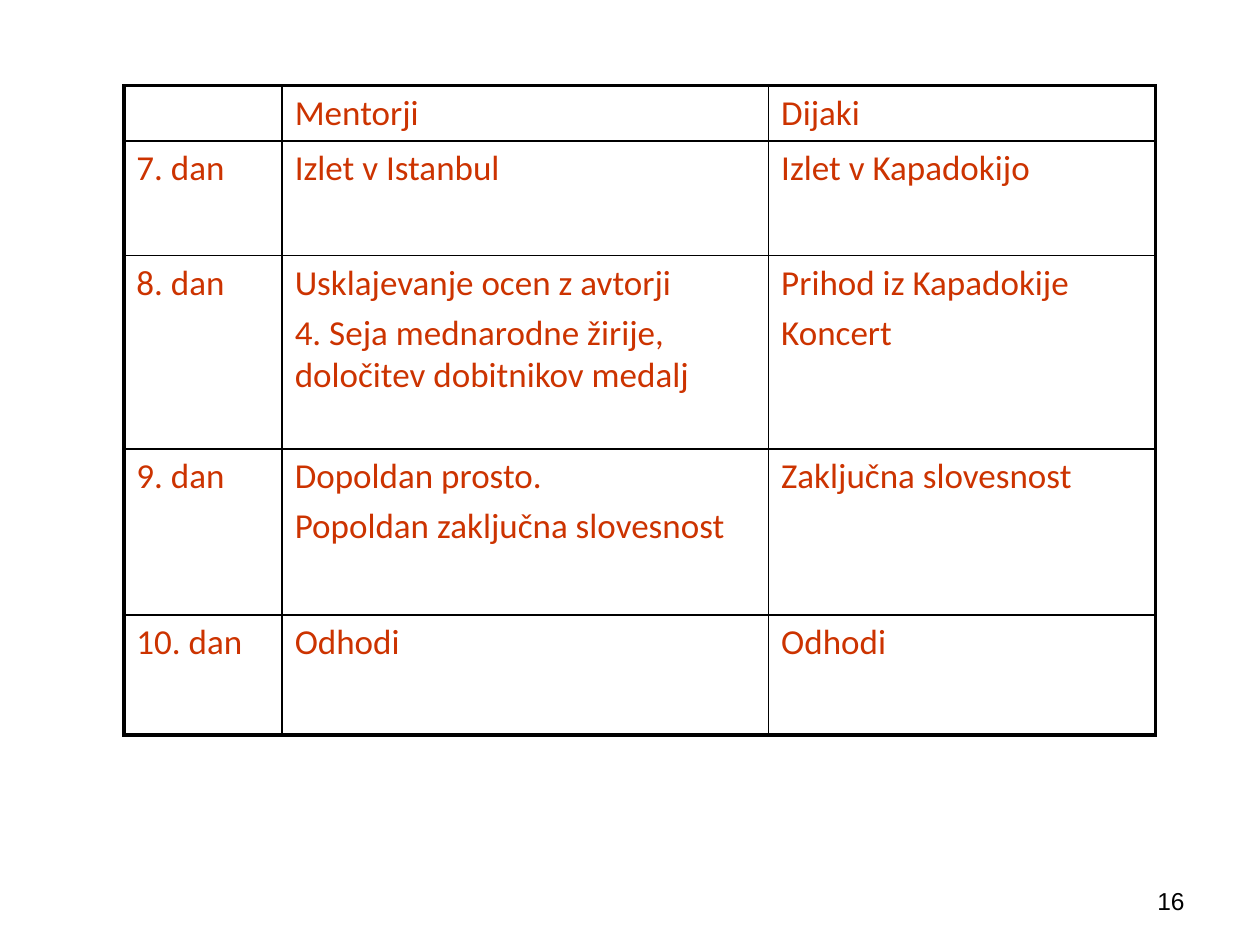
from dataclasses import dataclass

from lxml.etree import SubElement
from pptx import Presentation
from pptx.dml.color import RGBColor
from pptx.enum.text import MSO_ANCHOR, PP_ALIGN
from pptx.oxml.ns import qn
from pptx.util import Pt


@dataclass(frozen=True)
class Theme:
    text: str = "CC3300"
    ink: str = "000000"
    body_font: str = "Calibri"
    number_font: str = "Arial"
    body_size: float = 20
    number_size: float = 14
    inner_line: float = 1
    outer_line: float = 2.25
    para_gap: float = 4


THEME = Theme()

# Each cell is a list of paragraphs
SCHEDULE = [
    [[], ["Mentorji"], ["Dijaki"]],
    [["7. dan"], ["Izlet v Istanbul"], ["Izlet v Kapadokijo"]],
    [["8. dan"],
     ["Usklajevanje ocen z avtorji",
      "4. Seja mednarodne žirije, določitev dobitnikov medalj"],
     ["Prihod iz Kapadokije", "Koncert"]],
    [["9. dan"],
     ["Dopoldan prosto.", "Popoldan zaključna slovesnost"],
     ["Zaključna slovesnost"]],
    [["10. dan"], ["Odhodi"], ["Odhodi"]],
]
COLUMN_WIDTHS = [90.5, 278, 221]
ROW_HEIGHTS = [31.5, 65.5, 110.5, 95, 68.5]


def apply_format(target, values):
    for name, value in values.items():
        setattr(target, name, value)


def write_paragraphs(frame, lines, font, size, color, align=PP_ALIGN.LEFT):
    for index, line in enumerate(lines):
        para = frame.add_paragraph() if index else frame.paragraphs[0]
        para.alignment = align
        if index:
            para.space_before = Pt(THEME.para_gap)
        span = para.add_run()
        span.text = line
        apply_format(span.font, {"name": font, "size": Pt(size)})
        span.font.color.rgb = RGBColor.from_string(color)


def set_borders(cell, widths):
    properties = cell._tc.get_or_add_tcPr()
    for side, width in widths.items():
        line = SubElement(properties, qn(f"a:ln{side}"), w=str(Pt(width)))
        fill = SubElement(line, qn("a:solidFill"))
        SubElement(fill, qn("a:srgbClr"), val=THEME.ink)


def add_schedule(page, left, top):
    rows, columns = len(ROW_HEIGHTS), len(COLUMN_WIDTHS)
    table = page.shapes.add_table(
        rows, columns, Pt(left), Pt(top),
        Pt(sum(COLUMN_WIDTHS)), Pt(sum(ROW_HEIGHTS))).table
    apply_format(table, {"first_row": False, "horz_banding": False})
    for column, width in zip(table.columns, COLUMN_WIDTHS):
        column.width = Pt(width)
    for row, height in zip(table.rows, ROW_HEIGHTS):
        row.height = Pt(height)

    # Heavy lines run around the outside, thin lines between cells
    for r, entries in enumerate(SCHEDULE):
        for c, lines in enumerate(entries):
            cell = table.cell(r, c)
            outside = {"L": c == 0, "R": c == columns - 1,
                       "T": r == 0, "B": r == rows - 1}
            set_borders(cell, {
                side: THEME.outer_line if edge else THEME.inner_line
                for side, edge in outside.items()})
            cell.fill.background()
            write_paragraphs(cell.text_frame, lines, THEME.body_font,
                             THEME.body_size, THEME.text)


def add_page_number(page, number, left, top, width, height):
    box = page.shapes.add_textbox(Pt(left), Pt(top), Pt(width), Pt(height))
    frame = box.text_frame
    apply_format(frame, {"word_wrap": True,
                         "vertical_anchor": MSO_ANCHOR.MIDDLE})
    write_paragraphs(frame, [number], THEME.number_font, THEME.number_size,
                     THEME.ink, PP_ALIGN.RIGHT)


def main():
    deck = Presentation()
    apply_format(deck, {"slide_width": Pt(720), "slide_height": Pt(540)})
    page = deck.slides.add_slide(deck.slide_layouts[6])
    add_page_number(page, "16", 516, 500.5, 168, 28.75)
    add_schedule(page, 70.75, 49)
    deck.save("out.pptx")


if __name__ == "__main__":
    main()
